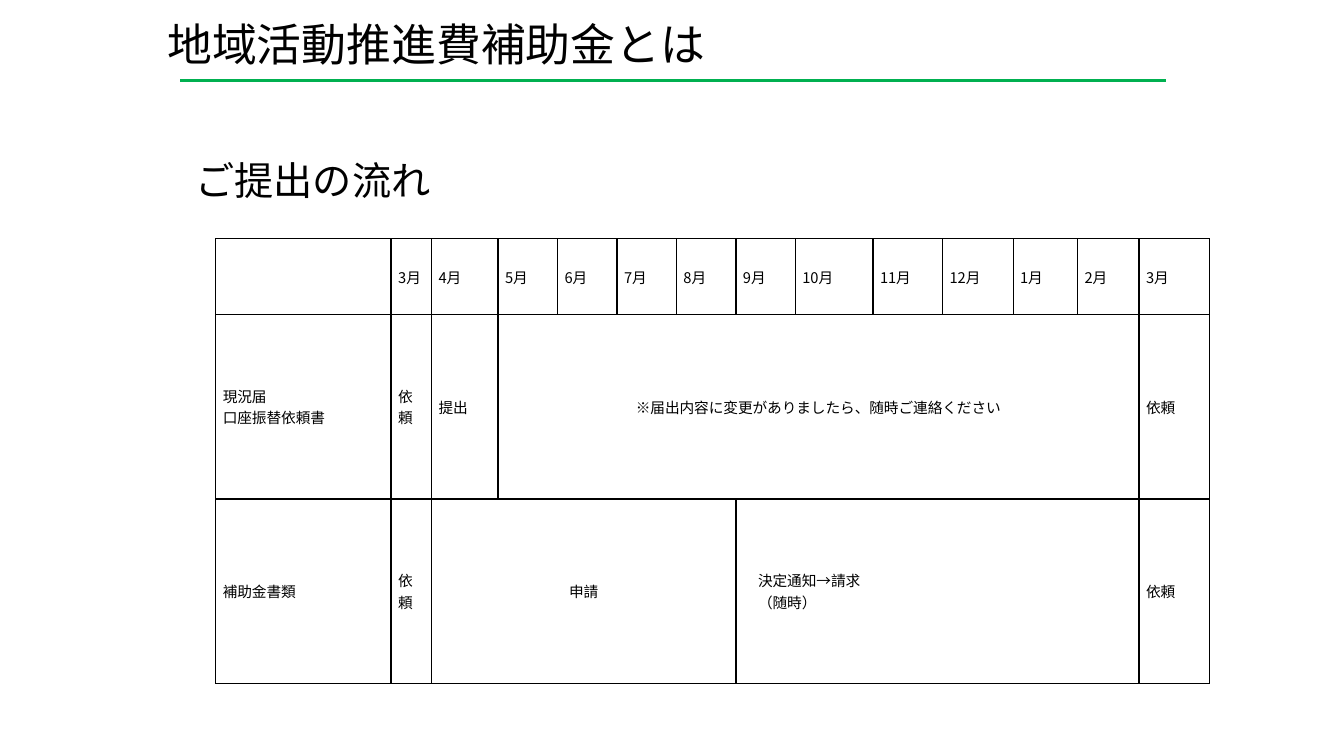
import pptx
import pptx.dml.color
import pptx.enum.shapes
import pptx.enum.text
import pptx.oxml
import pptx.oxml.ns
import pptx.util
from lxml import etree

Inches = pptx.util.Inches
Pt = pptx.util.Pt
ALIGN = pptx.enum.text.PP_ALIGN
ANCHOR = pptx.enum.text.MSO_ANCHOR
qn = pptx.oxml.ns.qn

GOTHIC = "Noto Sans CJK JP"
BLACK = "000000"
GREEN = "00B050"


def colour(hex_code):
    return pptx.dml.color.RGBColor.from_string(hex_code)


def write(frame, text, size, align=ALIGN.LEFT, indent=0, latin=GOTHIC):
    for number, line in enumerate(text.split("\n")):
        paragraph = frame.paragraphs[0] if number == 0 else frame.add_paragraph()
        paragraph.alignment = align
        if indent:
            paragraph._p.get_or_add_pPr().set("marL", str(Inches(indent)))
        digits = line[:-1] if line[:-1].isdigit() else ""
        pieces = [(digits, GOTHIC), (line[len(digits):], latin)]
        for piece, font_name in pieces:
            if not piece:
                continue
            run = paragraph.add_run()
            run.text = piece
            run.font.size = Pt(size)
            run.font.name = font_name
            run.font.color.rgb = colour(BLACK)
            east_asian = etree.SubElement(run._r.get_or_add_rPr(), qn("a:ea"))
            east_asian.set("typeface", GOTHIC)


class FlowSlide:
    def __init__(self, deck):
        self.slide = deck.slides.add_slide(deck.slide_layouts[5])

    def title(self, text, left, top, width, height):
        heading = self.slide.shapes.title
        heading.left, heading.top = Inches(left), Inches(top)
        heading.width, heading.height = Inches(width), Inches(height)
        heading.text_frame.vertical_anchor = ANCHOR.MIDDLE
        write(heading.text_frame, text, 32)

    def label(self, text, left, top, width, height):
        caption = self.slide.shapes.add_textbox(
            Inches(left), Inches(top), Inches(width), Inches(height))
        caption.text_frame.word_wrap = True
        write(caption.text_frame, text, 28)

    def rule(self, left, right, y):
        underline = self.slide.shapes.add_connector(
            pptx.enum.shapes.MSO_CONNECTOR.STRAIGHT,
            Inches(left), Inches(y), Inches(right), Inches(y))
        underline.line.color.rgb = colour(GREEN)
        underline.line.width = Pt(2.25)
        etree.SubElement(underline._element.spPr, qn("a:effectLst"))

    def border(self, cell, side, width):
        line = etree.SubElement(cell._tc.get_or_add_tcPr(), qn("a:ln" + side))
        line.set("w", str(Pt(width)))
        fill = etree.SubElement(line, qn("a:solidFill"))
        etree.SubElement(fill, qn("a:srgbClr")).set("val", BLACK)

    def schedule(self, left, top, widths, heights, entries):
        grid = self.slide.shapes.add_table(
            len(heights), len(widths), Inches(left), Inches(top),
            Inches(sum(widths)), Inches(sum(heights))).table
        grid.first_row = grid.horz_banding = False
        for column, width in zip(grid.columns, widths):
            column.width = Inches(width)
        for row, height in zip(grid.rows, heights):
            row.height = Inches(height)
        for r in range(len(heights)):
            for c in range(len(widths)):
                cell = grid.cell(r, c)
                cell.margin_left = cell.margin_right = Inches(0.07)
                cell.margin_top = cell.margin_bottom = 0
                cell.vertical_anchor = ANCHOR.MIDDLE
                self.border(cell, "L", 1.5 if c in (1, 2) else 1)
                self.border(cell, "R", 1.5 if c in (0, 1) else 1)
                self.border(cell, "T", 1)
                self.border(cell, "B", 1)
                cell.fill.background()
        for r, c, span, text, style in entries:
            cell = grid.cell(r, c)
            if span > 1:
                cell.merge(grid.cell(r, c + span - 1))
            write(cell.text_frame, text, 10.5, **{"align": ALIGN.JUSTIFY, **style})


def main():
    deck = pptx.Presentation()
    deck.slide_width, deck.slide_height = Inches(13.33), Inches(7.5)
    page = FlowSlide(deck)
    page.title("地域活動推進費補助金とは", 1.56, 0.11, 9.81, 0.64)
    page.label("ご提出の流れ", 1.84, 1.5, 3, 0.57)
    page.rule(1.79, 11.56, 0.8)

    centred = {"align": ALIGN.CENTER}
    months = [(0, c, 1, f"{(c + 1) % 12 + 1}月", {"latin": "Cambria"})
              for c in range(1, 14)]
    requests = [(r, c, 1, "依頼", {}) for r in (1, 2) for c in (1, 13)]
    steps = [
        (1, 0, 1, "現況届\n口座振替依頼書", {}),
        (1, 2, 1, "提出", {}),
        (1, 3, 10, "※届出内容に変更がありましたら、随時ご連絡ください", centred),
        (2, 0, 1, "補助金書類", {}),
        (2, 2, 5, "申請", centred),
        (2, 7, 6, "決定通知→請求\n（随時）", {"indent": 0.15}),
    ]
    widths = [1.74, 0.4, 0.66] + [0.59] * 5 + [0.77, 0.69, 0.7, 0.64, 0.61, 0.7]
    page.schedule(2.14, 2.37, widths, [0.75, 1.83, 1.83], months + requests + steps)
    deck.save("out.pptx")


if __name__ == "__main__":
    main()
